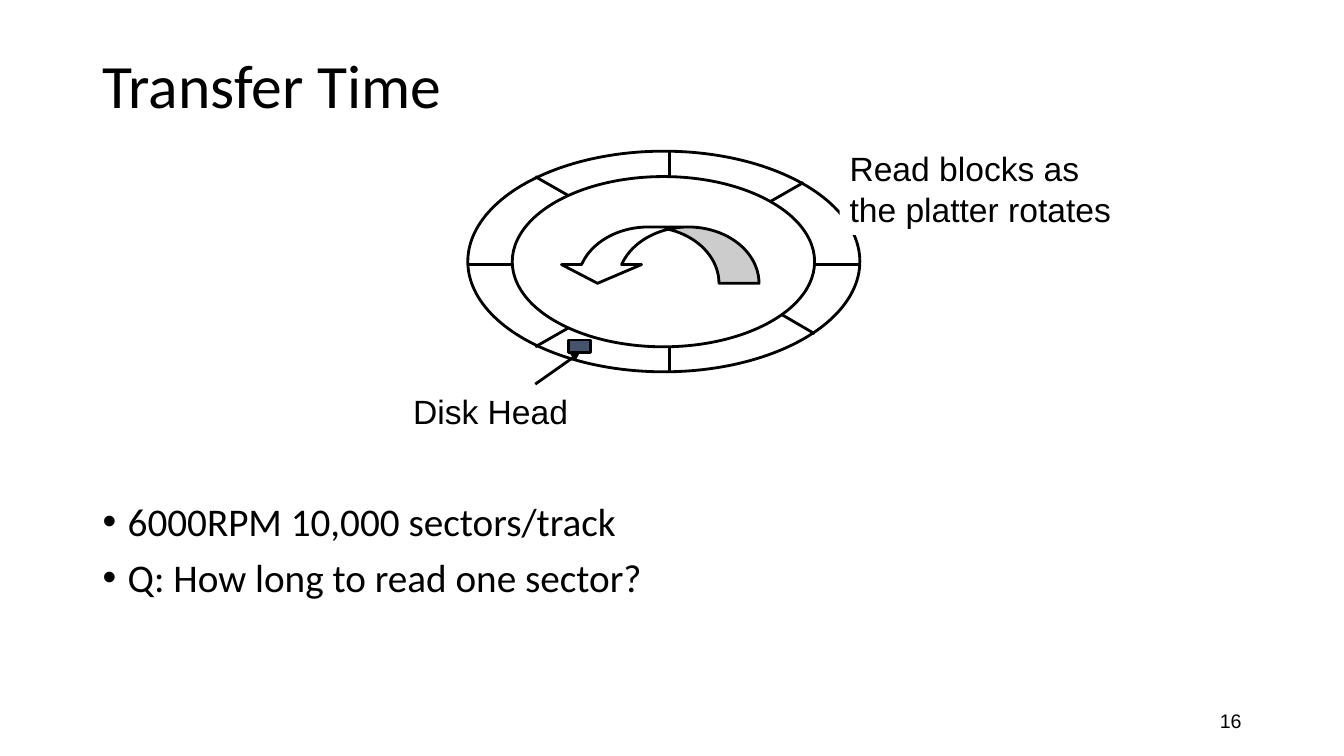
from dataclasses import dataclass

from lxml import etree
from pptx import Presentation
from pptx import util as u
from pptx.dml.color import RGBColor
from pptx.enum import shapes, text
from pptx.oxml.ns import qn


@dataclass(frozen=True)
class Theme:
    ink: RGBColor = RGBColor(0, 0, 0)
    paper: RGBColor = RGBColor(255, 255, 255)
    head: RGBColor = RGBColor(0x44, 0x54, 0x6A)
    heading_font: str = "Calibri"
    label_font: str = "Arial"
    title_size: int = 44
    body_size: int = 28
    label_size: int = 24
    number_size: int = 14
    line_width: int = 2


THEME = Theme()

SPOKES = [
    ((5.08, 0), (5.08, 0.64)),
    ((5.08, 4.93), (5.08, 5.56)),
    ((8.74, 2.85), (9.88, 2.85)),
    ((0, 2.85), (1.12, 2.85)),
    ((7.62, 1.27), (8.46, 0.79)),
    ((1.7, 4.93), (2.54, 4.45)),
    ((7.9, 4.11), (8.74, 4.6)),
    ((1.7, 0.64), (2.54, 1.12)),
]


def cm(*lengths):
    return [u.Cm(length) for length in lengths]


def place(shape, box):
    shape.left, shape.top, shape.width, shape.height = cm(*box)


def format_runs(frame, font, size):
    for paragraph in frame.paragraphs:
        for run in paragraph.runs:
            run.font.name = font
            run.font.size = u.Pt(size)
            run.font.color.rgb = THEME.ink


def add_outlined(slide, preset, box, fill):
    part = slide.shapes.add_shape(preset, *cm(*box))
    part.shadow.inherit = False
    part.fill.solid()
    part.fill.fore_color.rgb = fill
    part.line.color.rgb = THEME.ink
    part.line.width = u.Pt(THEME.line_width)
    return part


def add_line(slide, start, end):
    line = slide.shapes.add_connector(
        shapes.MSO_CONNECTOR.STRAIGHT, *cm(*start, *end))
    line.line.color.rgb = THEME.ink
    line.line.width = u.Pt(THEME.line_width)
    etree.SubElement(line._element.spPr, qn("a:effectLst"))
    return line


def add_label(slide, box, words, size=THEME.label_size):
    label = slide.shapes.add_textbox(*cm(*box))
    label.text_frame.word_wrap = False
    label.text_frame.text = words
    format_runs(label.text_frame, THEME.label_font, size)
    return label


def add_title(slide, box):
    title = slide.shapes.title
    place(title, box)
    frame = title.text_frame
    frame.text = "Transfer Time"
    frame.vertical_anchor = text.MSO_ANCHOR.MIDDLE
    frame.auto_size = text.MSO_AUTO_SIZE.NONE
    frame.paragraphs[0].alignment = text.PP_ALIGN.LEFT
    frame.paragraphs[0].line_spacing = 0.9
    format_runs(frame, THEME.heading_font, THEME.title_size)


def add_questions(slide, box):
    questions = slide.placeholders[1]
    place(questions, box)
    frame = questions.text_frame
    frame.text = "6000RPM 10,000 sectors/track\nQ: How long to read one sector?"
    frame.auto_size = text.MSO_AUTO_SIZE.NONE
    for paragraph in frame.paragraphs:
        paragraph.line_spacing = 0.9
        paragraph.space_before = u.Pt(10)
        properties = paragraph._p.get_or_add_pPr()
        properties.set("marL", str(u.Cm(0.635)))
        properties.set("indent", str(-u.Cm(0.635)))
        etree.SubElement(properties, qn("a:buFont")).set("typeface", THEME.label_font)
        etree.SubElement(properties, qn("a:buChar")).set("char", "•")
    format_runs(frame, THEME.heading_font, THEME.body_size)


def add_disk(slide, box):
    left, top, width, height = box

    def at(x, y):
        return left + x, top + y

    oval = shapes.MSO_SHAPE.OVAL
    add_outlined(slide, oval, box, THEME.paper)
    add_outlined(slide, oval, (*at(1.12, 0.64), width - 2.26, height - 1.27), THEME.paper)
    for inner, outer in SPOKES:
        add_line(slide, at(*inner), at(*outer))

    rotation = add_outlined(slide, shapes.MSO_SHAPE.CURVED_DOWN_ARROW,
                            (*at(2.26, 1.91), 5.08, 1.42), THEME.paper)
    rotation._element.spPr.xfrm.set("flipH", "1")
    for index, value in enumerate((0.711, 1.422, 0.333)):
        rotation.adjustments[index] = value

    disk_head = add_outlined(slide, shapes.MSO_SHAPE.RECTANGLE,
                             (*at(2.54, 4.76), 0.56, 0.32), THEME.head)
    pointer = add_line(slide, at(1.7, 5.87), at(2.82, 5.08))
    pointer.end_connect(disk_head, 2)
    etree.SubElement(pointer.line._get_or_add_ln(), qn("a:tailEnd")).set("type", "triangle")

    add_label(slide, (*at(-1.63, 5.92), 4.42, 1.27), "Disk Head")
    reading = add_label(slide, (*at(9.37, -0.2), 7.16, 2.31),
                        "Read blocks as\nthe platter rotates")
    reading.fill.solid()
    reading.fill.fore_color.rgb = THEME.paper


def add_page_number(slide, box):
    number = add_label(slide, box, "16", THEME.number_size)
    number.text_frame.word_wrap = True
    number.text_frame.vertical_anchor = text.MSO_ANCHOR.MIDDLE
    number.text_frame.paragraphs[0].alignment = text.PP_ALIGN.RIGHT


def main():
    deck = Presentation()
    deck.slide_width, deck.slide_height = cm(33.87, 19.05)
    slide = deck.slides.add_slide(deck.slide_layouts[1])
    add_title(slide, (2.33, 0.84, 29.21, 2.77))
    add_questions(slide, (2.33, 12.53, 29.21, 4.64))
    add_page_number(slide, (23.92, 17.65, 7.62, 1.02))
    add_disk(slide, (11.79, 3.81, 9.88, 5.56))
    deck.save("out.pptx")


if __name__ == "__main__":
    main()
